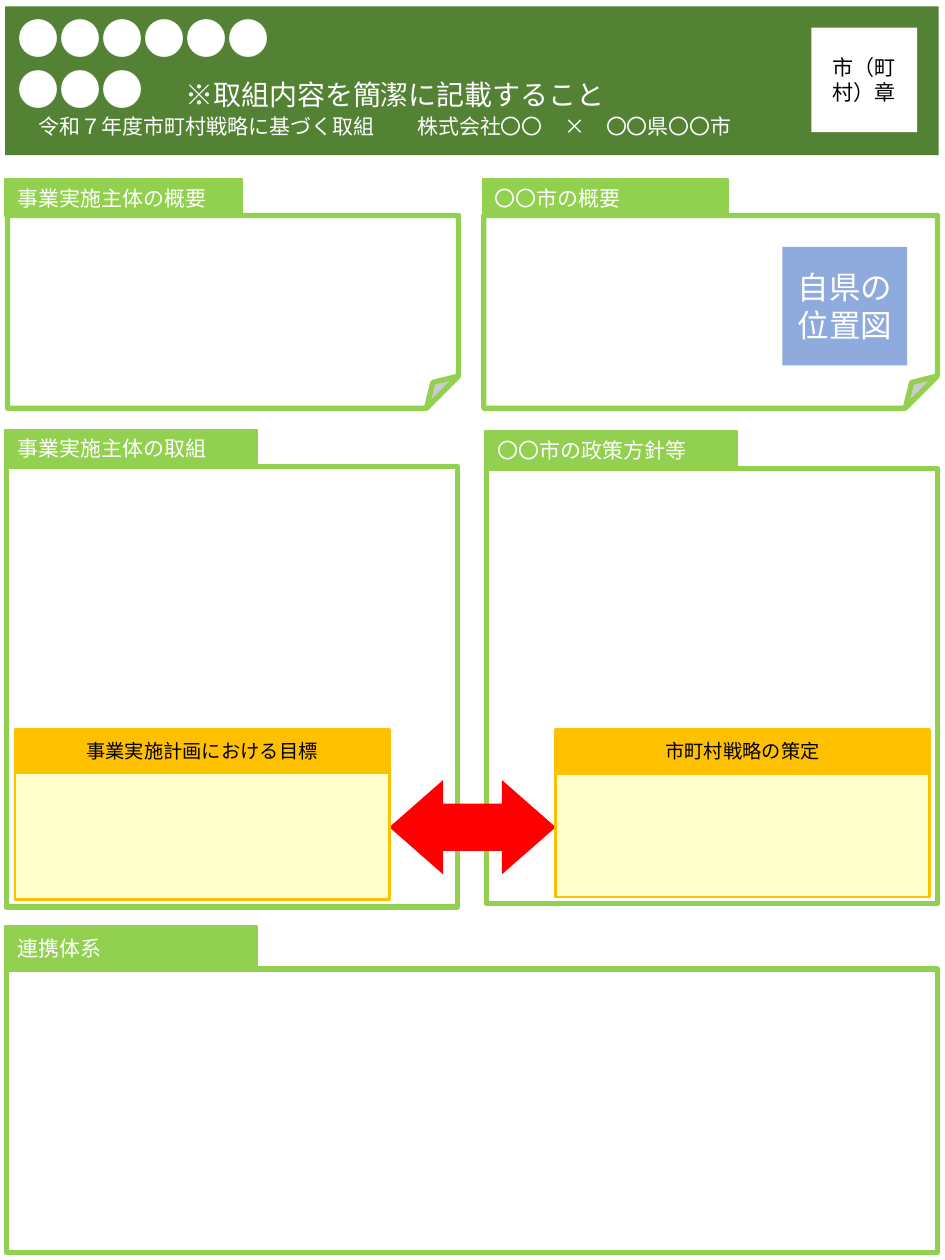
from lxml import etree
from pptx import Presentation
from pptx.dml.color import RGBColor
from pptx.enum.shapes import MSO_SHAPE
from pptx.enum.text import MSO_ANCHOR, MSO_AUTO_SIZE, PP_ALIGN
from pptx.oxml.ns import qn
from pptx.util import Inches, Pt

RECT = MSO_SHAPE.RECTANGLE
FOLDED = MSO_SHAPE.FOLDED_CORNER
ARROW = MSO_SHAPE.LEFT_RIGHT_ARROW
TOP, MIDDLE = MSO_ANCHOR.TOP, MSO_ANCHOR.MIDDLE
LEFT, CENTER = PP_ALIGN.LEFT, PP_ALIGN.CENTER
GROW, FIXED = MSO_AUTO_SIZE.SHAPE_TO_FIT_TEXT, MSO_AUTO_SIZE.NONE

WHITE = RGBColor(0xFF, 0xFF, 0xFF)
BLACK = RGBColor(0, 0, 0)
DARK_GREEN = RGBColor(0x54, 0x82, 0x35)
GREEN = RGBColor(0x92, 0xD0, 0x50)
ORANGE = RGBColor(0xFF, 0xC0, 0)
CREAM = RGBColor(0xFF, 0xFF, 0xCC)
RED = RGBColor(0xFF, 0, 0)
BLUE = RGBColor(0x8F, 0xAA, 0xDC)
FONT = "Noto Sans CJK JP"


def add_box(shapes, kind, x, y, w, h, fill=None, line=None, width=1):
    sp = shapes.add_shape(kind, Inches(x), Inches(y), Inches(w), Inches(h))
    sp.shadow.inherit = False
    if fill is None:
        sp.fill.background()
    else:
        sp.fill.solid()
        sp.fill.fore_color.rgb = fill
    if line is None:
        sp.line.fill.background()
    else:
        sp.line.color.rgb = line
        sp.line.width = Pt(width)
    return sp


def add_run(p, text, size=12, color=WHITE, font=FONT):
    r = p.add_run()
    r.text = text
    r.font.size = Pt(size)
    r.font.color.rgb = color
    r.font.name = font
    etree.SubElement(r.font._element, qn("a:ea"), typeface=font)


def set_text(sp, *paragraphs, align=LEFT, anchor=MIDDLE, auto=FIXED, **style):
    tf = sp.text_frame
    tf.word_wrap = True
    tf.auto_size = auto
    tf.vertical_anchor = anchor
    for i, runs in enumerate(paragraphs):
        p = tf.paragraphs[0] if i == 0 else tf.add_paragraph()
        p.alignment = align
        p.line_spacing = 1.0
        for text, size in runs:
            add_run(p, text, size=size, **style)


def add_tab_stop(p, position):
    tabs = etree.SubElement(p._p.get_or_add_pPr(), qn("a:tabLst"))
    etree.SubElement(tabs, qn("a:tab"), pos=str(Inches(position)), algn="l")


def add_header(s):
    sp = s.shapes.title
    sp.left, sp.top = Inches(0.04), Inches(0.05)
    sp.width, sp.height = Inches(7.41), Inches(1.18)
    sp.fill.solid()
    sp.fill.fore_color.rgb = DARK_GREEN
    set_text(sp,
             [("●●●●●●", 24)],
             [("●●●　", 24), ("※取組内容を簡潔に記載すること", 16)],
             [("　令和７年度市町村戦略に基づく取組\t株式会社〇〇　×　〇〇県〇〇市", 12)],
             anchor=TOP, auto=GROW)
    add_tab_stop(sp.text_frame.paragraphs[2], 3.17)


def add_panel(s, kind, x, y, w, h, fill=None):
    add_box(s.shapes, kind, x, y, w, h, fill, GREEN, 3)


def add_label(s, text, x, y, w, h=0.3, anchor=TOP, auto=GROW):
    sp = add_box(s.shapes, RECT, x, y, w, h, GREEN, GREEN)
    set_text(sp, [(text, 12)], anchor=anchor, auto=auto)


def add_goal(s, text, x, body_top, body_height):
    shapes = s.shapes.add_group_shape().shapes
    add_box(shapes, RECT, x, body_top, 2.97, body_height, CREAM, ORANGE, 1.5)
    head = add_box(shapes, RECT, x, 5.79, 2.97, 0.34, ORANGE, ORANGE, 1.5)
    set_text(head, [(text, 11)], align=CENTER, color=BLACK)


def main():
    prs = Presentation()
    prs.slide_width, prs.slide_height = Inches(7.5), Inches(10)
    s = prs.slides.add_slide(prs.slide_layouts[5])
    add_header(s)

    add_panel(s, FOLDED, 0.06, 1.71, 3.58, 1.53, WHITE)
    add_panel(s, FOLDED, 3.84, 1.71, 3.6, 1.53, WHITE)
    add_label(s, "事業実施主体の概要", 0.04, 1.42, 1.88)
    add_label(s, "〇〇市の概要", 3.83, 1.42, 1.95)

    add_panel(s, RECT, 0.05, 7.69, 7.39, 2.25)
    add_label(s, "連携体系", 0.04, 7.35, 2, 0.35, anchor=MIDDLE, auto=FIXED)

    add_panel(s, RECT, 0.05, 3.7, 3.58, 3.5)
    add_panel(s, RECT, 3.86, 3.72, 3.58, 3.45)
    arrow = add_box(s.shapes, ARROW, 3.09, 6.19, 1.32, 0.75, RED)
    arrow.adjustments[0] = 0.5
    arrow.adjustments[1] = 0.57
    add_label(s, "事業実施主体の取組", 0.04, 3.41, 2)
    add_label(s, "〇〇市の政策方針等", 3.85, 3.42, 2)
    add_goal(s, "事業実施計画における目標", 0.12, 6.1, 1.04)
    add_goal(s, "市町村戦略の策定", 4.41, 6.14, 0.98)

    emblem = add_box(s.shapes, RECT, 6.44, 0.22, 0.84, 0.83, WHITE)
    set_text(emblem, [("市（町村）章", 12)], align=CENTER, color=BLACK)
    location = add_box(s.shapes, RECT, 6.21, 1.96, 0.99, 0.94, BLUE)
    set_text(location, [("自県の", 18)], [("位置図", 18)],
             align=CENTER, font="Calibri")

    prs.save("out.pptx")


if __name__ == "__main__":
    main()
